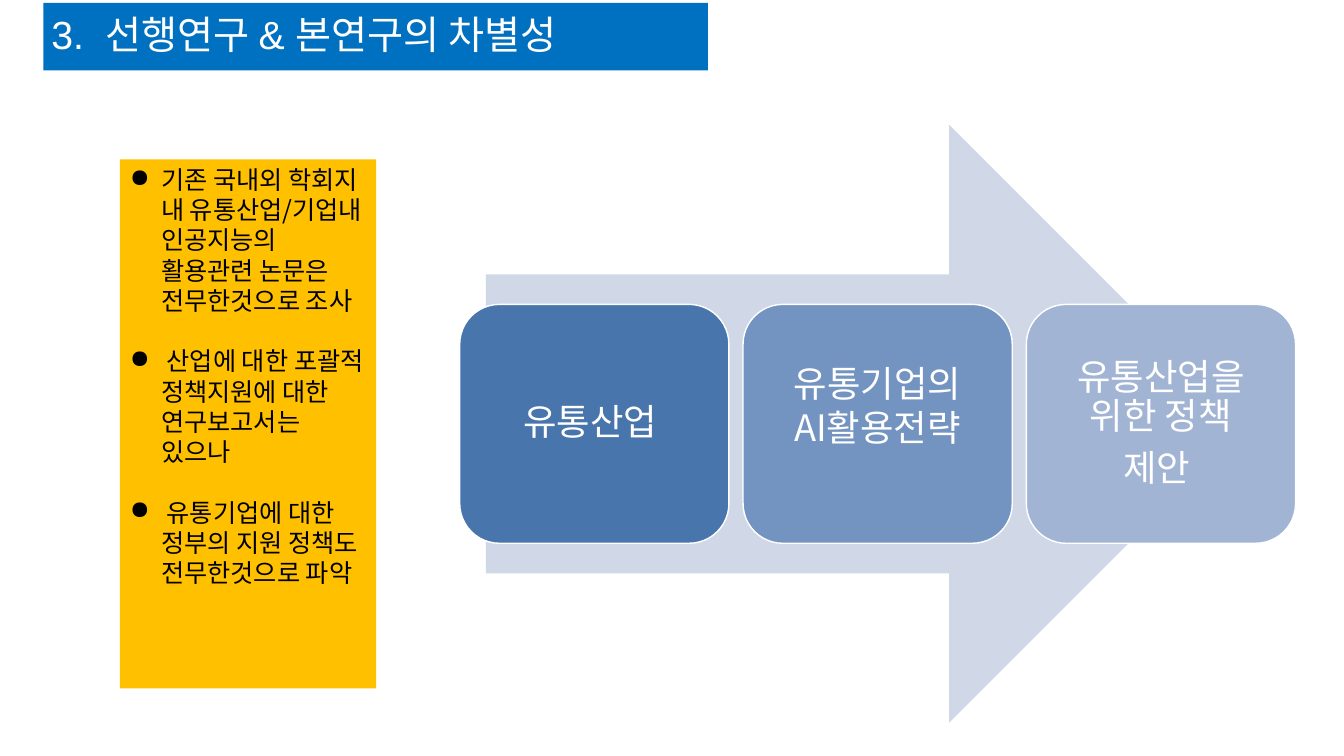
from pptx import Presentation
from pptx.dml.color import RGBColor
from pptx.enum.shapes import MSO_SHAPE
from pptx.enum.text import MSO_ANCHOR, PP_ALIGN
from pptx.oxml.xmlchemy import OxmlElement
from pptx.util import Pt

PX = 9144  # 100 px to the inch
WHITE = RGBColor(0xFF, 0xFF, 0xFF)
BLACK = RGBColor(0x00, 0x00, 0x00)
TITLE_BLUE = RGBColor(0x00, 0x70, 0xC0)
AMBER = RGBColor(0xFF, 0xC0, 0x00)
ARROW_BLUE = RGBColor(0xD0, 0xD8, 0xE8)
STEP_BLUES = [RGBColor(0x48, 0x75, 0xAC), RGBColor(0x73, 0x93, 0xC1), RGBColor(0xA2, 0xB4, 0xD4)]
KOREAN_FONT = "Noto Sans CJK KR"

deck = Presentation()
deck.slide_width, deck.slide_height = 1333 * PX, 750 * PX
page = deck.slides.add_slide(deck.slide_layouts[6])


def add_box(kind, left, top, width, height, fill):
    box = page.shapes.add_shape(kind, left * PX, top * PX, width * PX, height * PX)
    box.shadow.inherit = False
    box.fill.solid()
    box.fill.fore_color.rgb = fill
    box.line.fill.background()
    return box


def write(box, lines, size, font, color, anchor, align, margins):
    """Fill the box with one paragraph per line; margins are left, top, right, bottom in px."""
    frame = box.text_frame
    frame.word_wrap = True
    frame.vertical_anchor = anchor
    frame.margin_left, frame.margin_top, frame.margin_right, frame.margin_bottom = [m * PX for m in margins]
    frame.text = "\n".join(lines)
    for para in frame.paragraphs:
        para.alignment = align
        for span in para.runs:
            span.font.size = Pt(size)
            span.font.name = font
            span.font.color.rgb = color
    return frame.paragraphs


# Title bar
title = add_box(MSO_SHAPE.RECTANGLE, 43, 3, 659, 67, TITLE_BLUE)
heading = write(title, ["3.  선행연구 & 본연구의 차별성"], 28, "Arial", WHITE,
                MSO_ANCHOR.MIDDLE, PP_ALIGN.LEFT, (8, 8, 8, 8))[0]
heading.line_spacing = 0.9
heading.space_before = Pt(12)

# Arrow with three steps: text, bottom margin, line spacing
add_box(MSO_SHAPE.RIGHT_ARROW, 482, 124, 756, 593, ARROW_BLUE)
steps = [
    (["유통산업 "], 23, 0.9),
    (["유통기업의 AI활용전략"], 61, 1.0),
    (["유통산업을 위한 정책", "제안 "], 23, 0.9),
]
for index, (lines, bottom, spacing) in enumerate(steps):
    step = add_box(MSO_SHAPE.ROUNDED_RECTANGLE, 456 + 281 * index, 302, 267, 237, STEP_BLUES[index])
    step.line.color.rgb = WHITE
    step.line.width = Pt(1)
    paras = write(step, lines, 26, KOREAN_FONT, WHITE,
                  MSO_ANCHOR.MIDDLE, PP_ALIGN.CENTER, (23, 23, 23, bottom))
    for para in paras:
        para.line_spacing = spacing
    for para in paras[:-1]:
        para.space_after = Pt(9)

# Findings panel
findings = [
    "기존 국내외 학회지 내 유통산업/기업내 인공지능의 활용관련 논문은 전무한것으로 조사",
    " 산업에 대한 포괄적 정책지원에 대한 연구보고서는 있으나",
    " 유통기업에 대한 정부의 지원 정책도 전무한것으로 파악",
]
panel = add_box(MSO_SHAPE.RECTANGLE, 119, 158, 254, 525, AMBER)
paras = write(panel, findings, 18, KOREAN_FONT, BLACK,
              MSO_ANCHOR.TOP, PP_ALIGN.LEFT, (10, 5, 10, 5))
for para in paras:
    properties = para._p.get_or_add_pPr()
    properties.set("marL", str(31 * PX))
    properties.set("indent", str(-31 * PX))
    bullet = OxmlElement("a:buChar")
    bullet.set("char", "●")
    properties.append(bullet)
for para in paras[1:]:
    para.space_before = Pt(21.6)

deck.save("out.pptx")
